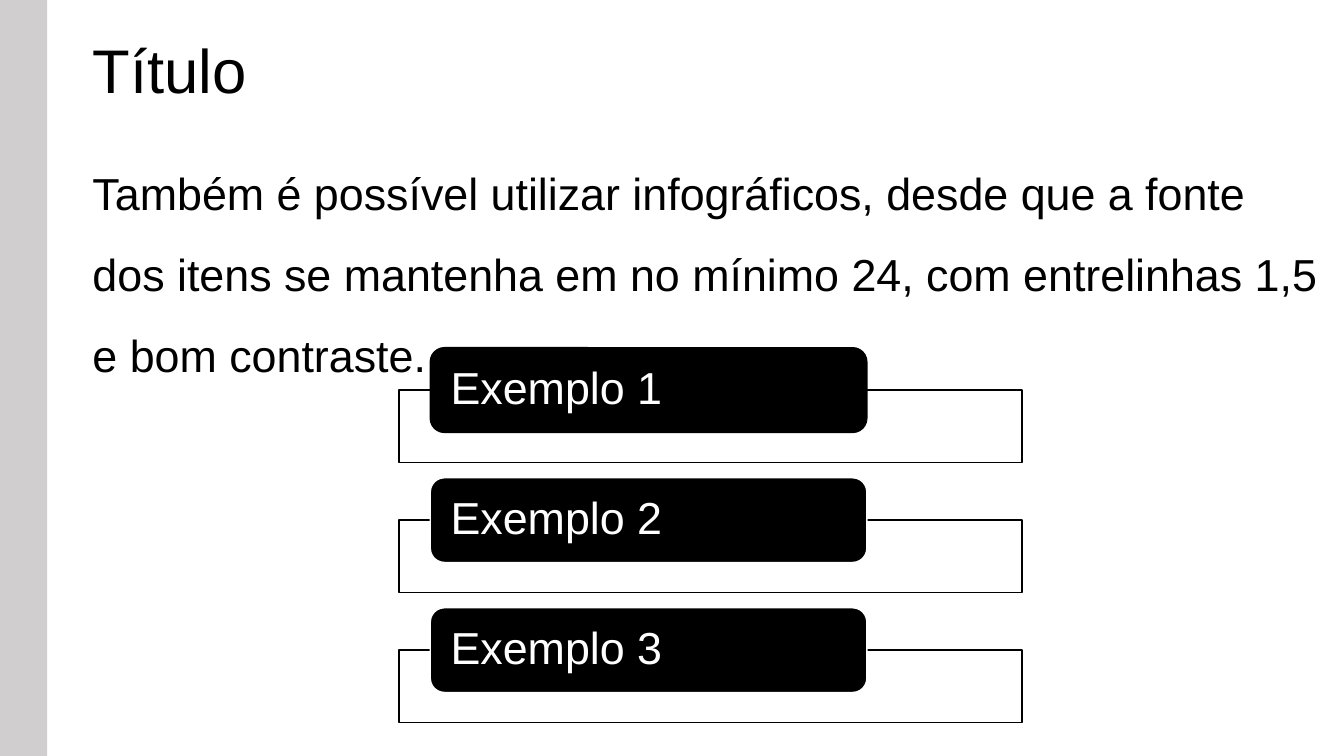
from dataclasses import dataclass

from lxml import etree
from pptx import Presentation
from pptx.dml.color import RGBColor
from pptx.enum.shapes import MSO_SHAPE
from pptx.enum.text import MSO_ANCHOR, PP_ALIGN
from pptx.oxml.ns import qn
from pptx.util import Pt

RECTANGLE = MSO_SHAPE.RECTANGLE
ROUNDED = MSO_SHAPE.ROUNDED_RECTANGLE
MIDDLE = MSO_ANCHOR.MIDDLE
TOP = MSO_ANCHOR.TOP
LEFT = PP_ALIGN.LEFT
TITLE_ONLY = 5


@dataclass(frozen=True)
class Theme:
    font: str = "Arial"
    black: RGBColor = RGBColor(0x00, 0x00, 0x00)
    white: RGBColor = RGBColor(0xFF, 0xFF, 0xFF)
    gray: RGBColor = RGBColor(0xD0, 0xCE, 0xCE)
    title_size: float = 44
    text_size: float = 32


THEME = Theme()
SLIDE_WIDTH, SLIDE_HEIGHT = 960, 540
TEXT_LEFT = 59
EXAMPLES = ("Exemplo 1", "Exemplo 2", "Exemplo 3")
FIRST_LABEL_TOP = 248.4
EXAMPLE_PITCH = 92.88
FRAME_DROP = 30.24


def write(shape, text, size, color, anchor, line_spacing, inset=7.2):
    frame = shape.text_frame
    frame.word_wrap = True
    frame.vertical_anchor = anchor
    frame.margin_left = frame.margin_right = Pt(inset)
    paragraph = frame.paragraphs[0]
    paragraph.text = text
    paragraph.alignment = LEFT
    paragraph.line_spacing = line_spacing
    font = paragraph.runs[0].font
    font.name = THEME.font
    font.size = Pt(size)
    font.color.rgb = color
    return paragraph


def add_block(slide, kind, left, top, width, height, fill, line=None):
    block = slide.shapes.add_shape(kind, Pt(left), Pt(top), Pt(width), Pt(height))
    block.shadow.inherit = False
    block.fill.solid()
    block.fill.fore_color.rgb = fill
    if line is None:
        block.line.fill.background()
    else:
        block.line.color.rgb = line
        block.line.width = Pt(1)
    return block


def set_opacity(block, percent):
    color = block.fill._xPr.find(qn("a:solidFill"))[0]
    etree.SubElement(color, qn("a:alpha")).set("val", str(percent * 1000))


def add_title(slide, text):
    title = slide.shapes.title
    title.left, title.top = Pt(TEXT_LEFT), Pt(0)
    title.width, title.height = Pt(763.2), Pt(104.4)
    write(title, text, THEME.title_size, THEME.black, MIDDLE, 0.9)


def add_body(slide, text):
    body = slide.shapes.add_textbox(Pt(TEXT_LEFT), Pt(95.8), Pt(897.8), Pt(383))
    paragraph = write(body, text, THEME.text_size, THEME.black, TOP, 1.5)
    paragraph.space_before = Pt(10)


def add_example(slide, text, top, outline):
    """Draw an open frame with a black label over its upper edge."""
    frame = add_block(slide, RECTANGLE, 285.1, top + FRAME_DROP, 445, 51.84,
                      THEME.white, THEME.black)
    set_opacity(frame, 90)
    label = add_block(slide, ROUNDED, 307.4, top, 311.8, 60.5, THEME.black, outline)
    write(label, text, THEME.text_size, THEME.white, MIDDLE, 0.9, inset=11.5)


def main():
    presentation = Presentation()
    presentation.slide_width = Pt(SLIDE_WIDTH)
    presentation.slide_height = Pt(SLIDE_HEIGHT)
    slide = presentation.slides.add_slide(presentation.slide_layouts[TITLE_ONLY])

    add_block(slide, RECTANGLE, 0, 0, 33.8, SLIDE_HEIGHT, THEME.gray)
    add_title(slide, "Título")
    add_body(slide, "Também é possível utilizar infográficos, desde que a fonte "
                    "dos itens se mantenha em no mínimo 24, com entrelinhas 1,5 "
                    "e bom contraste.")
    for index, example in enumerate(EXAMPLES):
        outline = THEME.white if index else THEME.black
        add_example(slide, example, FIRST_LABEL_TOP + index * EXAMPLE_PITCH, outline)

    presentation.save("out.pptx")


if __name__ == "__main__":
    main()
